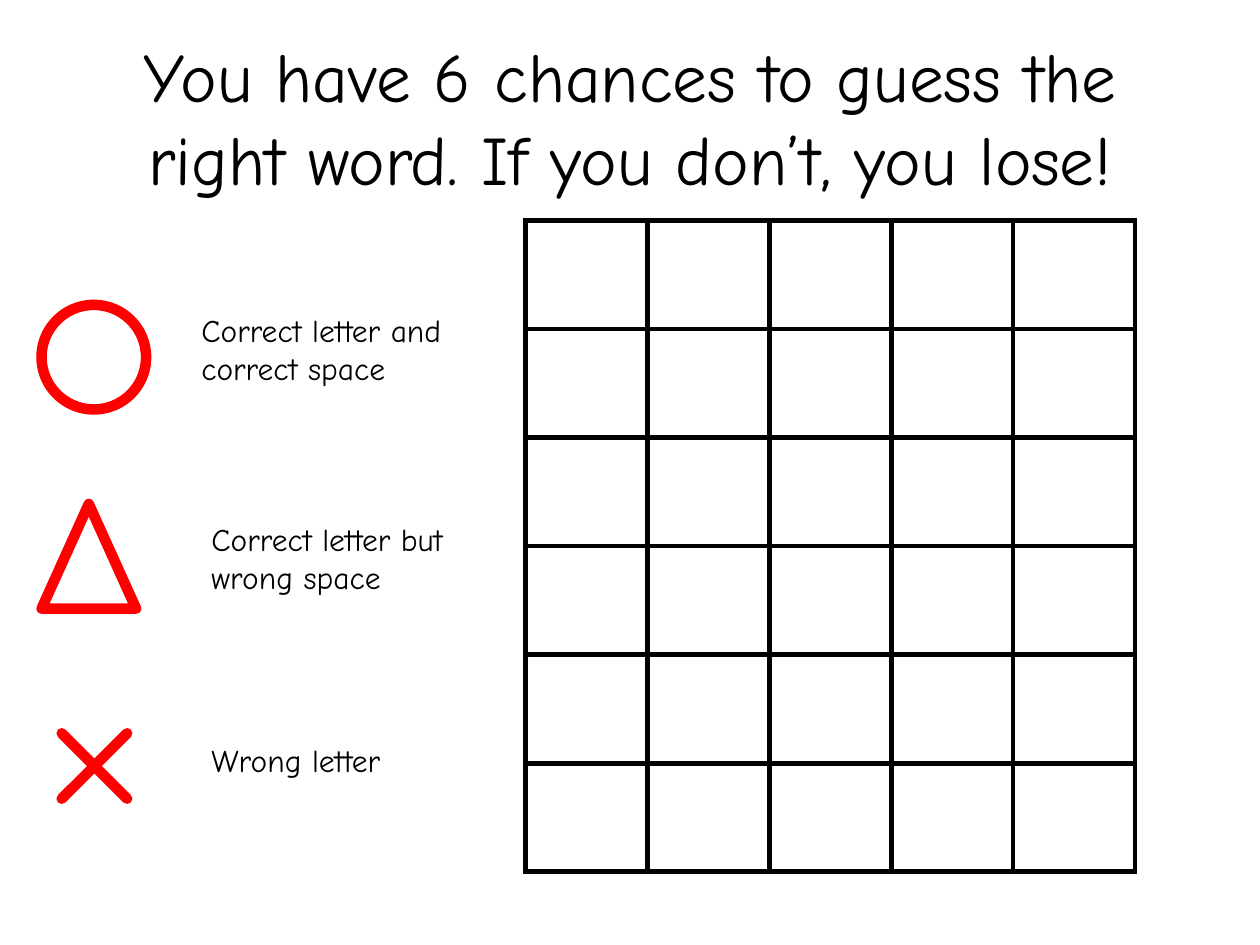
from dataclasses import dataclass

from lxml import etree
from pptx import Presentation
from pptx import util as u
from pptx.dml.color import RGBColor
from pptx.enum import shapes, text
from pptx.oxml import ns


@dataclass(frozen=True)
class Theme:
    font: str = "Comic Neue"
    ink: str = "000000"
    mark: str = "FF0000"
    cross_fill: str = "4F81BD"
    title_size: float = 39.6
    label_size: float = 18
    mark_width: float = 6
    grid_width: float = 3


@dataclass(frozen=True)
class Box:
    left: float
    top: float
    width: float
    height: float

    def lengths(self) -> list[u.Length]:
        return [u.Inches(side) for side in (self.left, self.top, self.width, self.height)]


@dataclass(frozen=True)
class Clue:
    preset: shapes.MSO_SHAPE
    mark_box: Box
    meaning: str
    meaning_box: Box
    fill: str | None = None
    adjustment: float | None = None


THEME = Theme()
GUESSES, LETTERS = 6, 5
TITLE = "You have 6 chances to guess the right word. If you don’t, you lose!"
TITLE_BOX = Box(0.5, 0.3, 9, 1.25)
GRID_BOX = Box(4.17, 1.75, 4.84, 5.17)
CLUES = [
    Clue(shapes.MSO_SHAPE.OVAL, Box(0.33, 2.42, 0.83, 0.83),
         "Correct letter and correct space", Box(1.5, 2.42, 2.33, 0.71)),
    Clue(shapes.MSO_SHAPE.ISOSCELES_TRIANGLE, Box(0.33, 4, 0.75, 0.83),
         "Correct letter but wrong space", Box(1.58, 4.08, 2.33, 0.71)),
    Clue(shapes.MSO_SHAPE.MATH_MULTIPLY, Box(0.25, 5.58, 1, 1),
         "Wrong letter", Box(1.58, 5.83, 2.33, 0.4), THEME.cross_fill, 0),
]


def add_words(slide, box: Box, words: str, size: float,
              align=text.PP_ALIGN.LEFT, anchor=text.MSO_ANCHOR.TOP) -> None:
    frame = slide.shapes.add_textbox(*box.lengths()).text_frame
    frame.word_wrap = True
    frame.vertical_anchor = anchor
    paragraph = frame.paragraphs[0]
    paragraph.text = words
    paragraph.alignment = align
    paragraph.font.name = THEME.font
    paragraph.font.size = u.Pt(size)
    paragraph.font.color.rgb = RGBColor.from_string(THEME.ink)


def add_clue(slide, clue: Clue) -> None:
    mark = slide.shapes.add_shape(clue.preset, *clue.mark_box.lengths())
    mark.shadow.inherit = False
    if clue.adjustment is not None:
        mark.adjustments[0] = clue.adjustment
    if clue.fill:
        mark.fill.solid()
        mark.fill.fore_color.rgb = RGBColor.from_string(clue.fill)
    else:
        mark.fill.background()
    mark.line.color.rgb = RGBColor.from_string(THEME.mark)
    mark.line.width = u.Pt(THEME.mark_width)
    add_words(slide, clue.meaning_box, clue.meaning, THEME.label_size)


def outline_cell(cell) -> None:
    cell.fill.background()
    properties = cell._tc.get_or_add_tcPr()
    for position, side in enumerate(("lnL", "lnR", "lnT", "lnB")):
        border = etree.Element(ns.qn(f"a:{side}"), w=str(u.Pt(THEME.grid_width)))
        fill = etree.SubElement(border, ns.qn("a:solidFill"))
        etree.SubElement(fill, ns.qn("a:srgbClr"), val=THEME.ink)
        properties.insert(position, border)


def add_guess_grid(slide) -> None:
    grid = slide.shapes.add_table(GUESSES, LETTERS, *GRID_BOX.lengths()).table
    grid.first_row = False
    grid.horz_banding = False
    for cell in grid.iter_cells():
        outline_cell(cell)


def main() -> None:
    deck = Presentation()
    deck.slide_width, deck.slide_height = u.Inches(10), u.Inches(7.5)
    slide = deck.slides.add_slide(deck.slide_layouts[6])
    add_words(slide, TITLE_BOX, TITLE, THEME.title_size,
              text.PP_ALIGN.CENTER, text.MSO_ANCHOR.MIDDLE)
    add_guess_grid(slide)
    for clue in CLUES:
        add_clue(slide, clue)
    deck.save("out.pptx")


if __name__ == "__main__":
    main()
